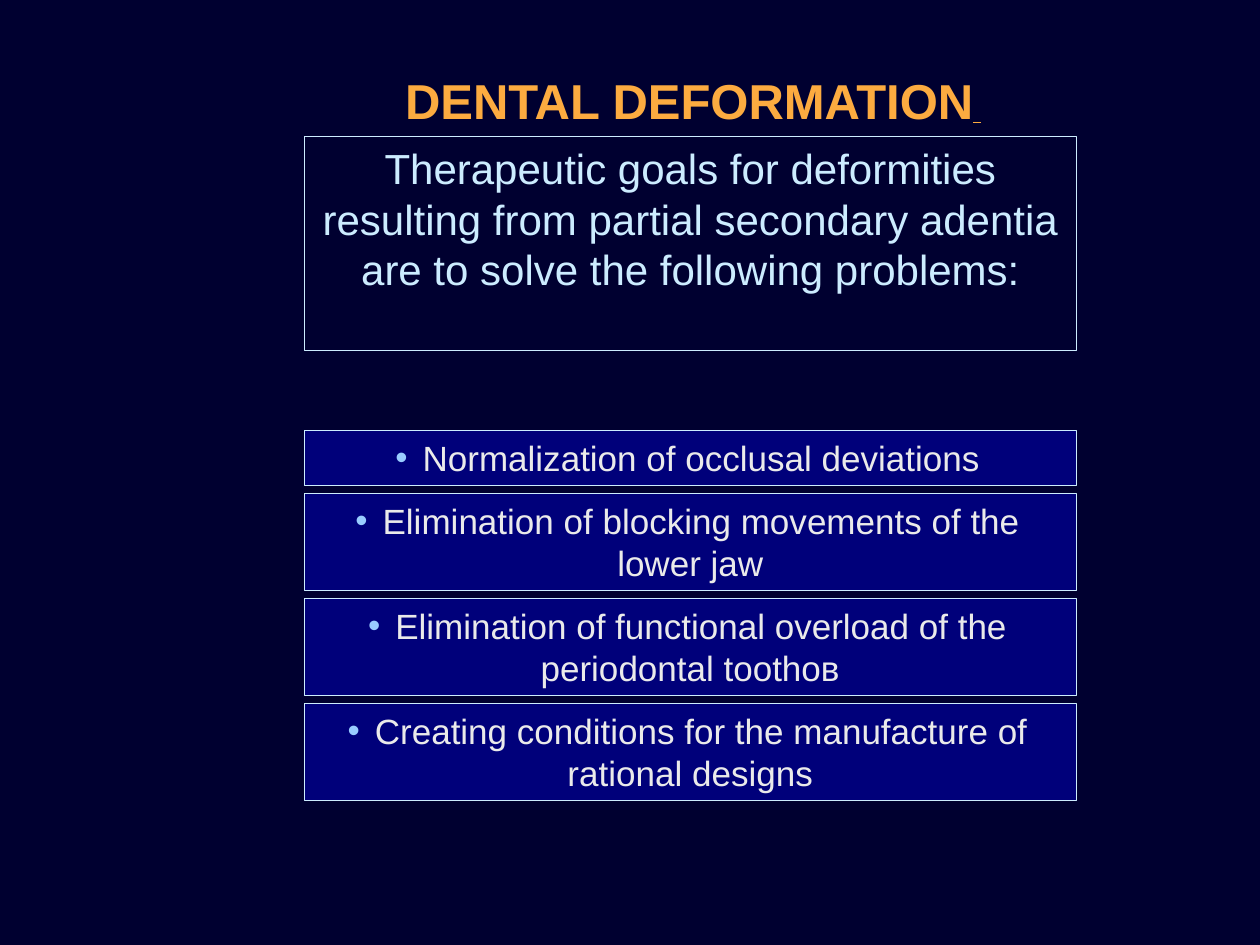
from dataclasses import dataclass

from lxml import etree
from pptx import Presentation
from pptx.dml.color import RGBColor
from pptx.enum.shapes import MSO_SHAPE
from pptx.enum.text import MSO_ANCHOR, MSO_AUTO_SIZE, PP_ALIGN
from pptx.oxml.ns import qn
from pptx.util import Pt

RECTANGLE = MSO_SHAPE.RECTANGLE
TOP, MIDDLE = MSO_ANCHOR.TOP, MSO_ANCHOR.MIDDLE
CENTER = PP_ALIGN.CENTER
NO_AUTOFIT = MSO_AUTO_SIZE.NONE
TITLE_ONLY = 5


@dataclass(frozen=True)
class Theme:
    font: str = "Arial"
    background: str = "000030"
    title: str = "FCAB40"
    pale: str = "CCECFF"
    bullet: str = "99CCFF"
    goal_fill: str = "00007A"
    goal_text: str = "EAEAEA"
    title_size: float = 28
    title_end_size: float = 16
    intro_size: float = 24
    goal_size: float = 20
    line_width: float = 0.75


THEME = Theme()

# Each goal with the number of lines it fills
GOALS = [
    ("Normalization of occlusal deviations", 1),
    ("Elimination of blocking movements of the lower jaw", 2),
    ("Elimination of functional overload of the periodontal toothoв", 2),
    ("Creating conditions for the manufacture of rational designs", 2),
]


def add_text(paragraph, text, *, size, color, bold=False, underline=False):
    run = paragraph.add_run()
    run.text = text
    font = run.font
    font.name = THEME.font
    font.size = Pt(size)
    font.bold = bold
    font.underline = underline
    font.color.rgb = RGBColor.from_string(color)


def prepare_frame(shape, anchor):
    """Set up the text frame and return its centred first paragraph."""
    frame = shape.text_frame
    frame.word_wrap = True
    frame.auto_size = NO_AUTOFIT
    frame.vertical_anchor = anchor
    frame.margin_left = frame.margin_right = Pt(7.2)
    frame.margin_top = frame.margin_bottom = Pt(3.6)
    paragraph = frame.paragraphs[0]
    paragraph.alignment = CENTER
    return paragraph


def add_bullet(paragraph, color):
    properties = paragraph._p.get_or_add_pPr()
    properties.set("marL", "0")
    properties.set("indent", str(-Pt(10)))
    bullet_color = etree.SubElement(properties, qn("a:buClr"))
    etree.SubElement(bullet_color, qn("a:srgbClr"), val=color)
    etree.SubElement(properties, qn("a:buFont"), typeface=THEME.font)
    etree.SubElement(properties, qn("a:buChar"), char="•")


def add_box(slide, left, top, width, height, fill=None):
    """Draw an outlined box and return its paragraph."""
    box = slide.shapes.add_shape(RECTANGLE, Pt(left), Pt(top), Pt(width), Pt(height))
    box.shadow.inherit = False
    if fill:
        box.fill.solid()
        box.fill.fore_color.rgb = RGBColor.from_string(fill)
    else:
        box.fill.background()
    box.line.color.rgb = RGBColor.from_string(THEME.pale)
    box.line.width = Pt(THEME.line_width)
    return prepare_frame(box, TOP)


def place_title(slide, left, top, width, height):
    title = slide.shapes.title
    title.left, title.top = Pt(left), Pt(top)
    title.width, title.height = Pt(width), Pt(height)
    paragraph = prepare_frame(title, MIDDLE)
    add_text(paragraph, "DENTAL DEFORMATION", size=THEME.title_size,
             color=THEME.title, bold=True)
    add_text(paragraph, " ", size=THEME.title_end_size,
             color=THEME.title, bold=True, underline=True)


def place_intro(slide, left, top, width, height):
    paragraph = add_box(slide, left, top, width, height)
    add_text(paragraph,
             "Therapeutic goals for deformities resulting from partial "
             "secondary adentia are to solve the following problems:",
             size=THEME.intro_size, color=THEME.pale)


def place_goals(slide, left, top, width, height):
    """Stack the goals; each extra line adds the same height."""
    gap, line_height = 4.5, 24
    extra_lines = sum(lines - 1 for _, lines in GOALS)
    free_height = height - gap * (len(GOALS) - 1) - line_height * extra_lines
    single_height = free_height / len(GOALS)
    for text, lines in GOALS:
        box_height = single_height + line_height * (lines - 1)
        paragraph = add_box(slide, left, top, width, box_height, THEME.goal_fill)
        add_bullet(paragraph, THEME.bullet)
        add_text(paragraph, " ", size=THEME.goal_size, color=THEME.bullet)
        add_text(paragraph, text, size=THEME.goal_size, color=THEME.goal_text)
        top += box_height + gap


def main():
    presentation = Presentation()
    presentation.slide_width, presentation.slide_height = Pt(720), Pt(540)
    slide = presentation.slides.add_slide(presentation.slide_layouts[TITLE_ONLY])
    background = slide.background.fill
    background.solid()
    background.fore_color.rgb = RGBColor.from_string(THEME.background)

    column_left, column_width = 174, 441
    place_title(slide, 108, 0, 576, 114)
    place_intro(slide, column_left, 78, column_width, 122.5)
    place_goals(slide, column_left, 246, column_width, 211.5)
    presentation.save("out.pptx")


if __name__ == "__main__":
    main()
